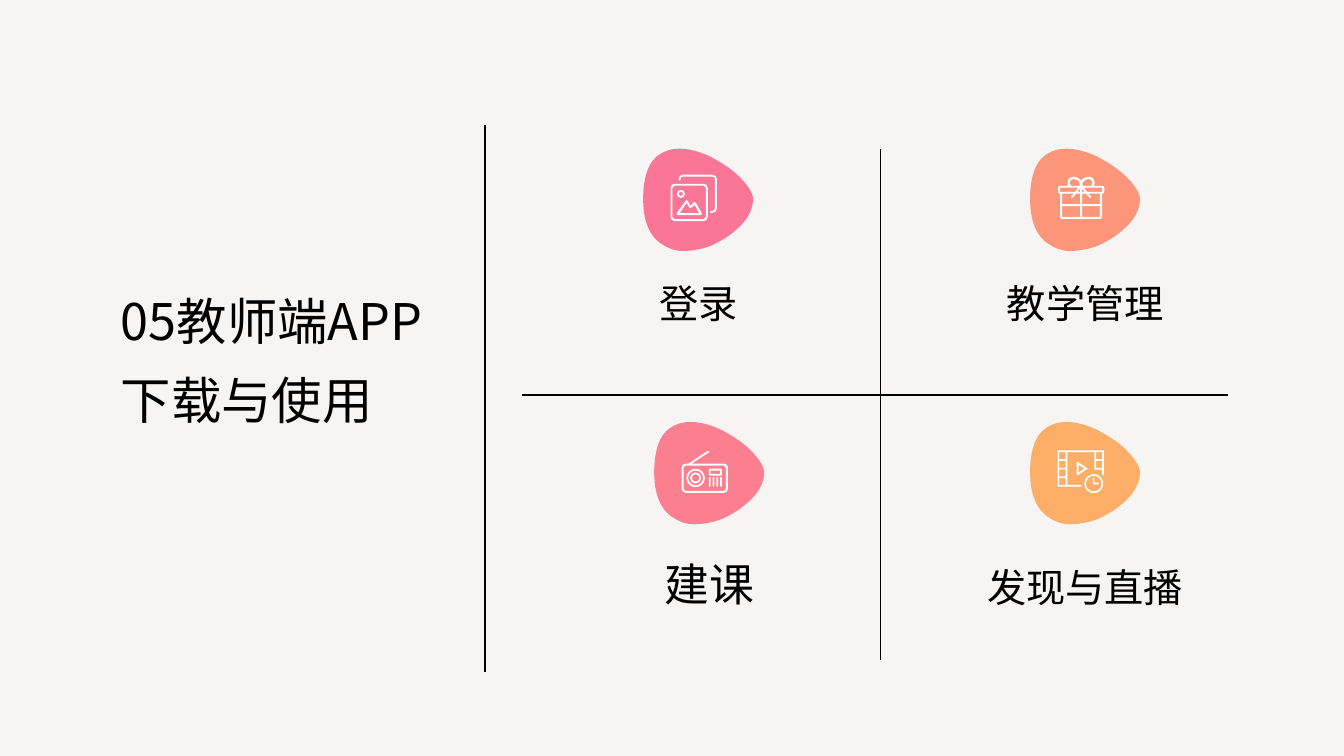
from lxml.etree import SubElement
from pptx import Presentation
from pptx.dml.color import RGBColor
from pptx.enum.shapes import MSO_CONNECTOR
from pptx.enum.text import MSO_ANCHOR, PP_ALIGN
from pptx.oxml.ns import qn
from pptx.util import Pt

# Content; all lengths are points
FONT = "Noto Sans CJK SC"
BLACK, WHITE, PAPER = "000000", "FFFFFF", "F7F5F3"
TITLE = ["05教师端APP", "下载与使用"]
TITLE_BOX = (79.2, 190.8, 258.5, 121)
RULES = [  # x1, y1, x2, y2, weight
    (628.9, 106.6, 628.9, 471.6, 1),
    (373, 282.2, 877, 282.2, 1),
    (346.3, 89.3, 346.3, 480.2, 1.5),
]


# Closed outlines: 2 numbers are a corner, 6 a Bezier curve
def box(x1, y1, x2, y2, r=0):
    if not r:
        return [(x1, y1), (x2, y1), (x2, y2), (x1, y2)]
    k = 0.45 * r
    return [(x1 + r, y1), (x2 - r, y1), (x2 - k, y1, x2, y1 + k, x2, y1 + r),
            (x2, y2 - r), (x2, y2 - k, x2 - k, y2, x2 - r, y2),
            (x1 + r, y2), (x1 + k, y2, x1, y2 - k, x1, y2 - r),
            (x1, y1 + r), (x1, y1 + k, x1 + k, y1, x1 + r, y1)]


def disc(x, y, r):
    return box(x - r, y - r, x + r, y + r, r)


def mirror(outline, axis):
    return [tuple(v if i % 2 else 2 * axis - v for i, v in enumerate(seg)) for seg in outline]


BADGE = [[
    (28.8, 72.7), (36, 72.5, 43.2, 71, 49, 68.6), (56.9, 65, 64.8, 59.9, 70.6, 53.4),
    (74.9, 49, 78.5, 42.5, 78.5, 35.4), (78.5, 31, 73.4, 24.5, 70.6, 21.6),
    (64.8, 15.1, 56.9, 10.1, 49, 5.8), (38.9, 0.7, 23.8, -3.6, 13, 2.9),
    (2.2, 8.6, 0, 23.8, 0, 35.4), (0, 48.2, 2.9, 61.2, 13.5, 67.9),
    (18, 70.9, 23, 72.7, 28.8, 72.7),
]]
BADGE_SIZE = (78.5, 72.7)

# Icons: an outline inside another one is a hole
PHOTOS = [
    box(0, 6.5, 26.6, 33.1, 2.9), box(1.4, 7.9, 25.2, 31.7, 1.4),
    disc(7.4, 13.7, 2.9), disc(7.4, 13.7, 1.5),
    [(4.4, 27.4), (10.8, 18.7), (11.2, 18, 11.9, 18, 12.2, 18.7), (14.4, 22.3), (16.6, 19.6),
     (17, 19.3, 17.6, 19.3, 18, 20), (22.3, 27.4), (22.5, 28.1, 22.3, 28.8, 21.6, 28.8),
     (5, 28.8), (4.3, 28.8, 4, 28.1, 4.4, 27.4)],
    [(6.5, 27.4), (11.5, 20.2), (13.7, 23.8), (14, 24, 14.2, 24, 14.4, 23.8),
     (17.3, 21.6), (20.4, 27.4)],
    [(8.6, 0), (29.5, 0), (31.7, 0, 33.1, 1.4, 33.1, 2.9), (33.1, 24),
     (33.1, 26, 31.7, 27.4, 29.5, 27.4), (28.8, 27.4), (28, 27.4, 28, 25.9, 28.8, 25.9),
     (29.5, 25.9), (31, 25.9, 31.7, 25, 31.7, 24), (31.7, 2.9), (31.7, 2, 31, 1.4, 29.5, 1.4),
     (8.6, 1.4), (7.9, 1.4, 7.2, 2, 7.2, 2.9), (7.2, 3.6), (7.2, 4.5, 5.8, 4.5, 5.8, 3.6),
     (5.8, 2.9), (5.8, 1.4, 7.2, 0, 8.6, 0)],
]
GIFT_HALF = [
    [(1.5, 7.9), (14.4, 7.9), (12.4, 10.8), (1.5, 10.8)],
    [(15.8, 8.2), (15.8, 10.8), (14.2, 10.8)],
    [(3.1, 12.2), (11.5, 12.2), (9.4, 14), (8.8, 14.8, 9.8, 15.6, 10.6, 15), (13, 12.2),
     (15.8, 12.2), (15.8, 19.6), (3.1, 19.6)],
    box(3.1, 21, 15.8, 28.8),
    [(9.3, 6.5), (8.4, 5.2, 8.2, 4, 8.7, 2.9), (9.4, 1.4, 11.6, 1.3, 13.6, 2.3),
     (14.6, 2.9, 15.4, 4.2, 15.7, 5.2), (15.2, 6.5)],
]
GIFT = [
    [(1.6, 6.5), (7.2, 6.5), (6.7, 5, 6.7, 3.5, 7.4, 2.2), (8.6, -0.1, 11.6, -0.6, 14.3, 0.9),
     (15.4, 1.4, 16.2, 2.2, 16.55, 2.9), (16.9, 2.2, 17.7, 1.4, 18.8, 0.9),
     (21.5, -0.6, 24.5, -0.1, 25.7, 2.2), (26.4, 3.5, 26.4, 5, 25.9, 6.5), (31.5, 6.5),
     (32.5, 6.5, 33.1, 7.2, 33.1, 8), (33.1, 10.7), (33.1, 11.5, 32.5, 12.2, 31.5, 12.2),
     (31.5, 28.8), (31.5, 29.7, 31, 30.2, 30, 30.2), (3.1, 30.2),
     (2.1, 30.2, 1.6, 29.7, 1.6, 28.8), (1.6, 12.2), (0.6, 12.2, 0, 11.5, 0, 10.7), (0, 8),
     (0, 7.2, 0.6, 6.5, 1.6, 6.5)],
] + GIFT_HALF + [mirror(outline, 16.55) for outline in GIFT_HALF]
FILM = [
    [(0, 0), (33.1, 0), (33.1, 17.3), (33.1, 18.2, 31.8, 18.2, 31.8, 17.3), (31.8, 13.7),
     (26.4, 13.7), (26.4, 1.2), (7, 1.2), (7, 24.6), (16.6, 24.6),
     (17.4, 24.6, 17.4, 25.8, 16.6, 25.8), (0, 25.8)],
    [(13.7, 8.4), (13.7, 8, 14.1, 7.9, 14.6, 8.2), (21.6, 13), (14.6, 17.6),
     (14.1, 17.9, 13.7, 17.7, 13.7, 17.2)],
    [(15, 10.1), (19.3, 13), (15, 15.8)],
    disc(25.9, 23.7, 6.8), disc(25.9, 23.7, 5.6),
    [(25.2, 19.4), (26.4, 19.4), (26.4, 23), (29.5, 23), (29.5, 24.2), (25.2, 24.2)],
] + [box(x1, 1.2 + 6.2 * i, x2, 6.2 + 6.2 * i)
     for x1, x2, n in [(1.2, 5.8, 4), (27.6, 31.8, 2)] for i in range(n)]
RADIO = [
    box(0, 9.4, 33.1, 30.2, 2.8), box(1.4, 10.8, 31.7, 28.8, 1.4),
    [(4.8, 9.4), (18.8, 0.2), (19.6, -0.2, 20.3, 0.7, 19.6, 1.3), (7.1, 9.4)],
    box(19.4, 13, 28.8, 18, 0.6), box(20.7, 14.3, 27.5, 16.7),
] + [disc(10, 19.6, r) for r in (6.6, 5.3, 4, 2.7)] + [
    box(19.4 + 2.7 * i, 18.9, 20.7 + 2.7 * i, 26, 0.6) for i in range(4)]

ROWS = [(106.6, 202.4), (301.8, 404.8)]  # badge top, label top
TOPICS = [  # label, size, badge left, row, colour, icon, icon offset, icon size
    ("教学管理", 28, 735.8, 0, "FB967B", GIFT, (19.9, 19.6), (33.1, 30.2)),
    ("登录", 28, 459.4, 0, "FA7596", PHOTOS, (19.6, 18.2), (33.1, 33.1)),
    ("发现与直播", 28, 735.8, 1, "FCAE68", FILM, (19.6, 20), (33.1, 30.5)),
    ("建课", 32, 467.3, 1, "FB7F8E", RADIO, (19.6, 20), (33.1, 30.2)),
]
LABEL_W, LABEL_H, LABEL_SHIFT = 267.1, 34.6, 94.2


def rgb(value):
    return RGBColor.from_string(value)


def add_figure(shapes, left, top, size, outlines, color):
    """Add one filled freeform made of closed outlines with true curves."""
    builder = shapes.build_freeform(0, 0)
    builder.add_line_segments([tuple(map(Pt, size))], close=False)
    sp = builder.convert_to_shape(Pt(left), Pt(top))
    figure = sp._element.find(".//" + qn("a:path"))
    for child in list(figure):
        figure.remove(child)
    for outline in outlines:
        for i, seg in enumerate(outline):
            tag = "a:moveTo" if i == 0 else "a:lnTo" if len(seg) == 2 else "a:cubicBezTo"
            step = SubElement(figure, qn(tag))
            for x, y in zip(seg[::2], seg[1::2]):
                SubElement(step, qn("a:pt"), x=str(int(Pt(x))), y=str(int(Pt(y))))
        SubElement(figure, qn("a:close"))
    sp.shadow.inherit = False
    sp.fill.solid()
    sp.fill.fore_color.rgb = rgb(color)
    sp.line.fill.background()


def add_text(shapes, bounds, lines, size, align, wrap, anchor, spacing=None):
    tf = shapes.add_textbox(*map(Pt, bounds)).text_frame
    tf.word_wrap = wrap
    tf.vertical_anchor = anchor
    for i, text in enumerate(lines):
        p = tf.add_paragraph() if i else tf.paragraphs[0]
        p.alignment = align
        p.line_spacing = spacing
        r = p.add_run()
        r.text = text
        r.font.size = Pt(size)
        r.font.name = FONT
        r.font.color.rgb = rgb(BLACK)
        SubElement(r.font._element, qn("a:ea"), typeface=FONT)


prs = Presentation()
prs.slide_width, prs.slide_height = Pt(960), Pt(540)
s = prs.slides.add_slide(prs.slide_layouts[6])
s.background.fill.solid()
s.background.fill.fore_color.rgb = rgb(PAPER)

# Four topics: badge with icon, label below
for label, size, left, row, color, icon, (dx, dy), icon_size in TOPICS:
    top, label_top = ROWS[row]
    group = s.shapes.add_group_shape().shapes
    add_figure(group, left, top, BADGE_SIZE, BADGE, color)
    add_figure(group, left + dx, top + dy, icon_size, icon, WHITE)
    add_text(s.shapes, (left - LABEL_SHIFT, label_top, LABEL_W, LABEL_H), [label], size,
             PP_ALIGN.CENTER, False, MSO_ANCHOR.BOTTOM)

# Dividers and title
for x1, y1, x2, y2, weight in RULES:
    rule = s.shapes.add_connector(MSO_CONNECTOR.STRAIGHT, *map(Pt, (x1, y1, x2, y2)))
    rule.line.width = Pt(weight)
    rule.line.color.rgb = rgb(BLACK)
    SubElement(rule._element.spPr, qn("a:effectLst"))
add_text(s.shapes, TITLE_BOX, TITLE, 36, PP_ALIGN.LEFT, True, MSO_ANCHOR.TOP, 1.3)

prs.save("out.pptx")
